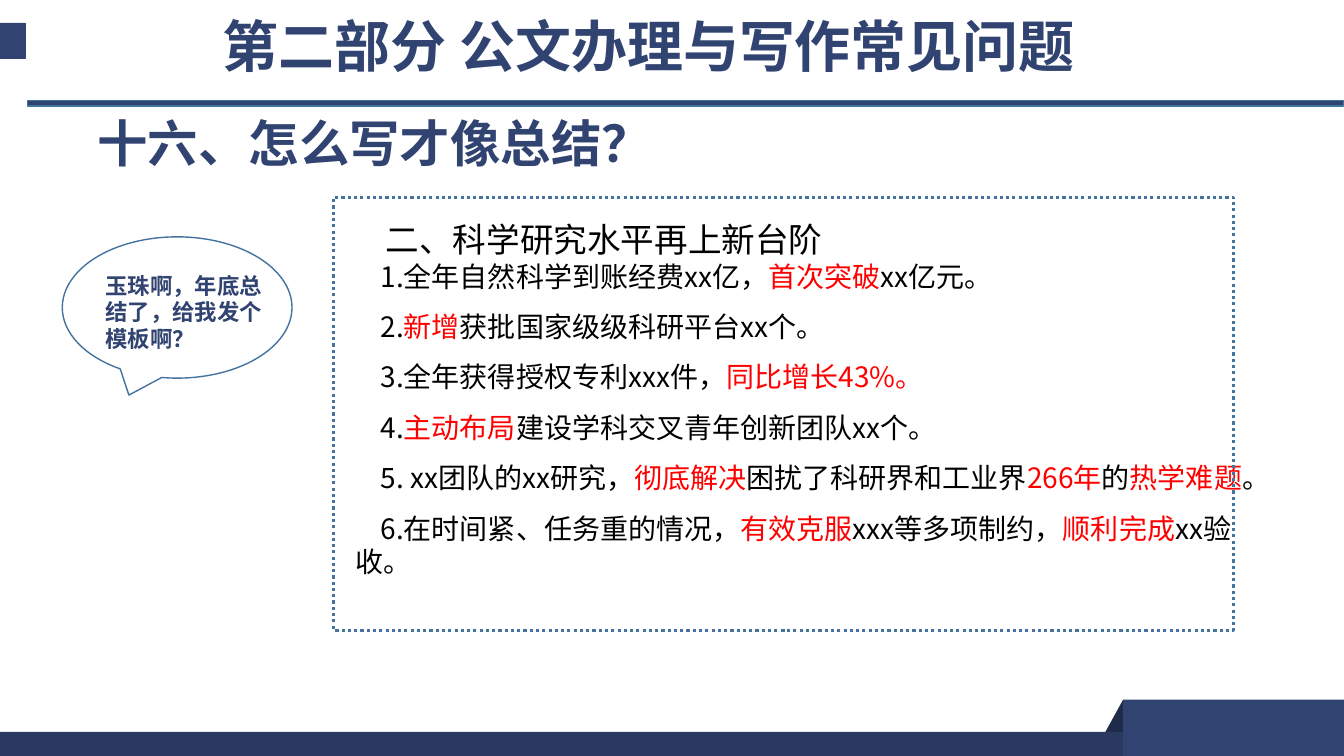
from pptx import Presentation
from pptx.dml.color import RGBColor
from pptx.enum.dml import MSO_LINE
from pptx.enum.shapes import MSO_SHAPE
from pptx.enum.text import MSO_ANCHOR, PP_ALIGN
from pptx.util import Cm, Pt

HUES = {"navy": "314371", "deep": "2A3960", "dark": "1F2B4A",
        "edge": "43739E", "red": "FF0000", "black": "000000"}
SANS, SERIF = "Noto Sans CJK SC", "Times New Roman"

deck = Presentation()
deck.slide_width, deck.slide_height = Cm(33.87), Cm(19.05)
slide = deck.slides.add_slide(deck.slide_layouts[5])


def add_box(kind, box, fill=None, edge=None, width=1):
    shape = slide.shapes.add_shape(kind, *map(Cm, box))
    shape.shadow.inherit = False
    if fill:
        shape.fill.solid()
        shape.fill.fore_color.rgb = RGBColor.from_string(HUES[fill])
    else:
        shape.fill.background()
    if edge:
        shape.line.color.rgb = RGBColor.from_string(HUES[edge])
        shape.line.width = Pt(width)
    else:
        shape.line.fill.background()
    return shape


def set_text(para, text, size, font, bold=False, hue="black"):
    """Fill a paragraph; every second part between bars is red."""
    para.font.name, para.font.size, para.font.bold = font, Pt(size), bold
    para.font.color.rgb = RGBColor.from_string(HUES[hue])
    for i, part in enumerate(text.split("|")):
        if part:
            run = para.add_run()
            run.text = part
            if i % 2:
                run.font.color.rgb = RGBColor.from_string(HUES["red"])


# Footer band and corner mark
add_box(MSO_SHAPE.ISOSCELES_TRIANGLE, (27.86, 17.63, 0.89, 0.81), "dark")
add_box(MSO_SHAPE.RECTANGLE, (0, 18.44, 33.87, 0.61), "deep")
add_box(MSO_SHAPE.RECTANGLE, (-0.03, 0.58, 0.67, 0.89), "navy", "navy", 0.5)
add_box(MSO_SHAPE.RECTANGLE, (28.3, 17.63, 5.57, 1.42), "navy")

# Title and rule
title = slide.shapes.title
title.left, title.top, title.width, title.height = map(
    Cm, (0.97, 0.36, 30.76, 2.31))
title.text_frame.vertical_anchor = MSO_ANCHOR.TOP
head = title.text_frame.paragraphs[0]
head.alignment = PP_ALIGN.CENTER
head.line_spacing = 0.9
set_text(head, "第二部分 公文办理与写作常见问题", 40, SANS, True, "navy")
add_box(MSO_SHAPE.RECTANGLE, (0.69, 2.54, 33.17, 0.13), "navy", "edge")

# Sample summary
items = [
    "1.全年自然科学到账经费xx亿，|首次突破|xx亿元。",
    "2.|新增|获批国家级级科研平台xx个。",
    "3.全年获得授权专利xxx件，|同比增长43%。",
    "4.|主动布局|建设学科交叉青年创新团队xx个。",
    "5. xx团队的xx研究，|彻底解决|困扰了科研界和工业界|266年|的|热学难题|。",
    "6.在时间紧、任务重的情况，|有效克服|xxx等多项制约，|顺利完成|xx验收。",
]
body = slide.shapes.add_textbox(*map(Cm, (8.71, 5.31, 23.01, 10.26))).text_frame
body.word_wrap = True
lead = body.paragraphs[0]
lead.line_spacing = Pt(31)
lead._p.get_or_add_pPr().set("indent", str(Cm(0.76)))
set_text(lead, "二、科学研究水平再上新台阶", 24, SANS)
for i, item in enumerate(items):
    para = body.add_paragraph()
    para.line_spacing = Pt(24)
    para.space_before = Pt(12 if i else 0)
    para._p.get_or_add_pPr().set("indent", str(Cm(0.63)))
    set_text(para, item, 20, SANS)
frame = add_box(MSO_SHAPE.RECTANGLE, (8.41, 4.98, 22.68, 10.9),
                edge="edge", width=2.25)
frame.line.dash_style = MSO_LINE.ROUND_DOT

# Speech bubble and section heading
bubble = add_box(MSO_SHAPE.OVAL_CALLOUT, (1.57, 5.97, 5.79, 3.56), edge="edge")
bubble.adjustments[0], bubble.adjustments[1] = -0.21, 0.62
notes = [
    ((2.41, 6.73, 4.93, 2.31), "玉珠啊，年底总结了，给我发个模板啊？", 16, 19),
    ((2.21, 2.67, 23.65, 1.8), "十六、怎么写才像总结？", 36, 44),
]
for box, text, size, pitch in notes:
    area = slide.shapes.add_textbox(*map(Cm, box)).text_frame
    area.word_wrap = True
    para = area.paragraphs[0]
    para.line_spacing = Pt(pitch)
    set_text(para, text, size, SERIF, True, "navy")

deck.save("out.pptx")
